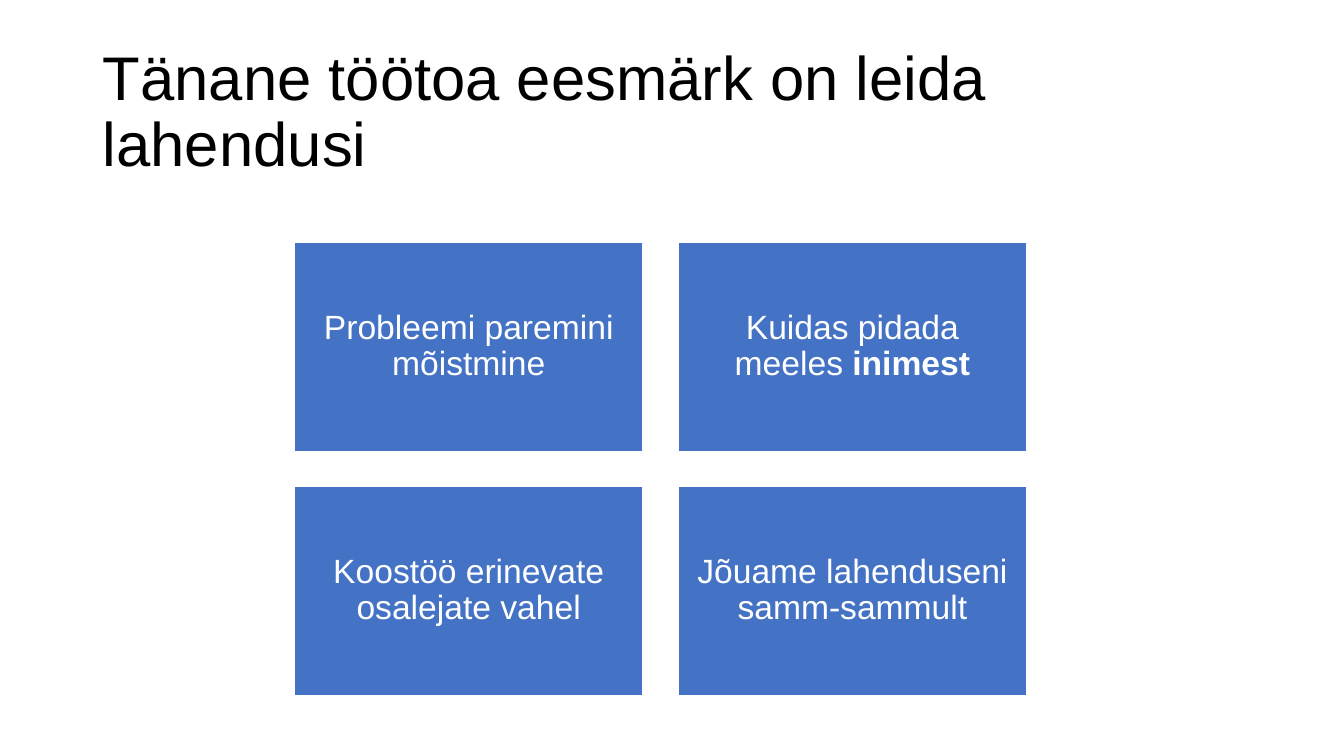
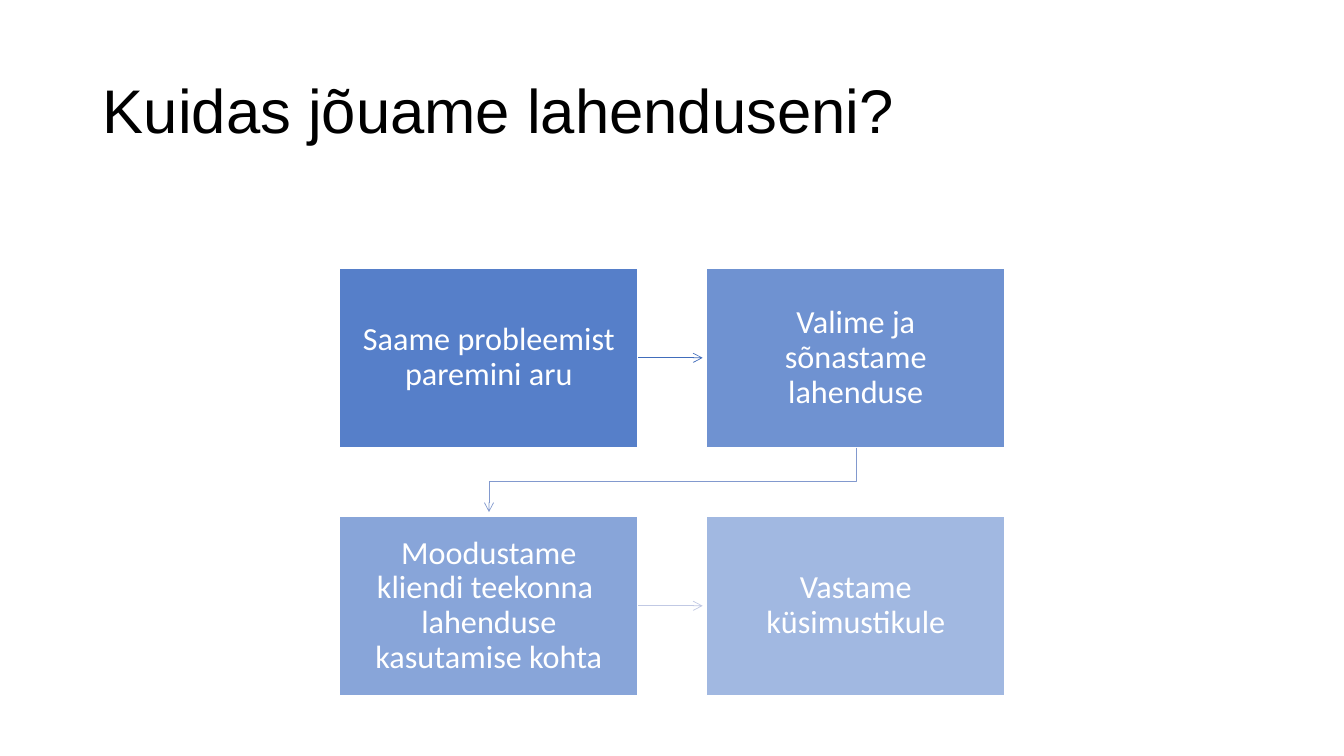
"""Build two workshop slides: a grid of goals and a stepwise flow."""
import dataclasses

import lxml.etree
import pptx
import pptx.dml.color
import pptx.enum.shapes
import pptx.enum.text
import pptx.oxml.ns
import pptx.util

qn = pptx.oxml.ns.qn
Pt = pptx.util.Pt


@dataclasses.dataclass(frozen=True)
class Theme:
    """Hold the colours, fonts and sizes shared by the slides."""
    ink: str = "000000"
    pale: str = "FFFFFF"
    blue: str = "4472C4"
    arrows: tuple = ("416DBB", "8299CE", "C1C9E4")
    main: str = "Arial"
    flow: str = "Calibri"
    head: int = 44
    goal: int = 24
    step: int = 23
    edge: float = 1
    thin: float = 0.5


THEME = Theme()
WIDE = pptx.util.Inches(13.33)
HIGH = pptx.util.Inches(7.5)
COL = WIDE / 100
ROW = HIGH / 100


def span(left, top, cols, rows):
    """Turn grid columns and rows into a box of slide lengths."""
    return int(left * COL), int(top * ROW), int(cols * COL), int(rows * ROW)


def tint(color):
    """Return a colour object for a hex string."""
    return pptx.dml.color.RGBColor.from_string(color)


def style(para, face, size, color, align):
    """Set the shared look of one paragraph."""
    para.font.name = face
    para.font.size = Pt(size)
    para.font.color.rgb = tint(color)
    para.alignment = align
    para.line_spacing = 0.9


def titled(deck, text):
    """Add a title-only slide and format its title."""
    slide = deck.slides.add_slide(deck.slide_layouts[5])
    title = slide.shapes.title
    title.left, title.top, title.width, title.height = span(6.9, 5.33, 86.25, 19.33)
    frame = title.text_frame
    frame.text = text
    frame.word_wrap = True
    frame.auto_size = pptx.enum.text.MSO_AUTO_SIZE.NONE
    frame.vertical_anchor = pptx.enum.text.MSO_ANCHOR.MIDDLE
    style(frame.paragraphs[0], THEME.main, THEME.head, THEME.ink,
          pptx.enum.text.PP_ALIGN.LEFT)
    return slide


def card(slide, box, text, face, size, inset, bold="", alpha=100):
    """Draw one filled card with centred text and an optional bold ending."""
    shape = slide.shapes.add_shape(pptx.enum.shapes.MSO_SHAPE.RECTANGLE, *box)
    shape.shadow.inherit = False
    shape.fill.solid()
    shape.fill.fore_color.rgb = tint(THEME.blue)
    if alpha < 100:
        color = shape._element.spPr.find(qn("a:solidFill")).find(qn("a:srgbClr"))
        lxml.etree.SubElement(color, qn("a:alpha"), val=str(alpha * 1000))
    shape.line.color.rgb = tint(THEME.pale)
    shape.line.width = Pt(THEME.edge)
    frame = shape.text_frame
    frame.word_wrap = True
    frame.vertical_anchor = pptx.enum.text.MSO_ANCHOR.MIDDLE
    pad = pptx.util.Inches(inset)
    frame.margin_left = frame.margin_right = pad
    frame.margin_top = frame.margin_bottom = pad
    para = frame.paragraphs[0]
    para.text = text
    if bold:
        run = para.add_run()
        run.text = bold
        run.font.bold = True
    style(para, face, size, THEME.pale, pptx.enum.text.PP_ALIGN.CENTER)
    return shape


def cells(area, gap):
    """Split an area into two by two cells with an equal gap."""
    left, top, wide, high = area
    cell_w, cell_h = (wide - gap) // 2, (high - gap) // 2
    return [(left + col * (cell_w + gap), top + row * (cell_h + gap), cell_w, cell_h)
            for row in range(2) for col in range(2)]


def tip(line, color):
    """Give a line its colour, width and open arrowhead."""
    line.line.color.rgb = tint(color)
    line.line.width = Pt(THEME.thin)
    stroke = line._element.spPr.find(qn("a:ln"))
    lxml.etree.SubElement(stroke, qn("a:tailEnd"), type="arrow")


def across(slide, start, end, color, slack):
    """Draw an arrow from one card towards the card on its right."""
    mid = start.top + start.height // 2
    line = slide.shapes.add_connector(
        pptx.enum.shapes.MSO_CONNECTOR.STRAIGHT,
        start.left + start.width, mid, end.left - slack, mid)
    line.begin_connect(start, 3)
    tip(line, color)
    lxml.etree.SubElement(line._element.spPr, qn("a:effectLst"))


def down(slide, start, end, color, slack):
    """Draw a bent arrow from one card down to the row below."""
    right = start.left + start.width // 2
    left = end.left + end.width // 2
    top = start.top + start.height
    mid = (top + end.top) // 2
    pen = slide.shapes.build_freeform(right, top, scale=1.0)
    pen.add_line_segments([(right, mid), (left, mid), (left, end.top - slack)],
                          close=False)
    line = pen.convert_to_shape()
    line.shadow.inherit = False
    line.fill.background()
    tip(line, color)


def goals(slide, area):
    """Place the four goals in an area."""
    texts = [("Probleemi paremini mõistmine", ""),
             ("Kuidas pidada meeles ", "inimest"),
             ("Koostöö erinevate osalejate vahel", ""),
             ("Jõuame lahenduseni samm-sammult", "")]
    for box, (text, bold) in zip(cells(area, int(2.6 * COL)), texts):
        card(slide, box, text, THEME.main, THEME.goal, 0.1, bold)


def steps(slide, area):
    """Place the four steps and their arrows in an area."""
    texts = [("Saame probleemist paremini aru", 90),
             ("Valime ja sõnastame lahenduse", 77),
             ("Moodustame kliendi teekonna \vlahenduse kasutamise kohta", 63),
             ("Vastame küsimustikule", 50)]
    cards = [card(slide, box, text, THEME.flow, THEME.step, 0.18, alpha=alpha)
             for box, (text, alpha) in zip(cells(area, int(5.1 * COL)), texts)]
    slack = int(0.3 * COL)
    draws = (across, down, across)
    for draw, start, end, color in zip(draws, cards, cards[1:], THEME.arrows):
        draw(slide, start, end, color, slack)


def main():
    """Build and save the deck."""
    deck = pptx.Presentation()
    deck.slide_width, deck.slide_height = WIDE, HIGH
    goals(titled(deck, "Tänane töötoa eesmärk on leida lahendusi"),
          span(21.9, 32, 54.5, 60))
    steps(titled(deck, "Kuidas jõuame lahenduseni?"),
          span(25.28, 35.47, 49.5, 56.53))
    deck.save("out.pptx")


if __name__ == "__main__":
    main()
